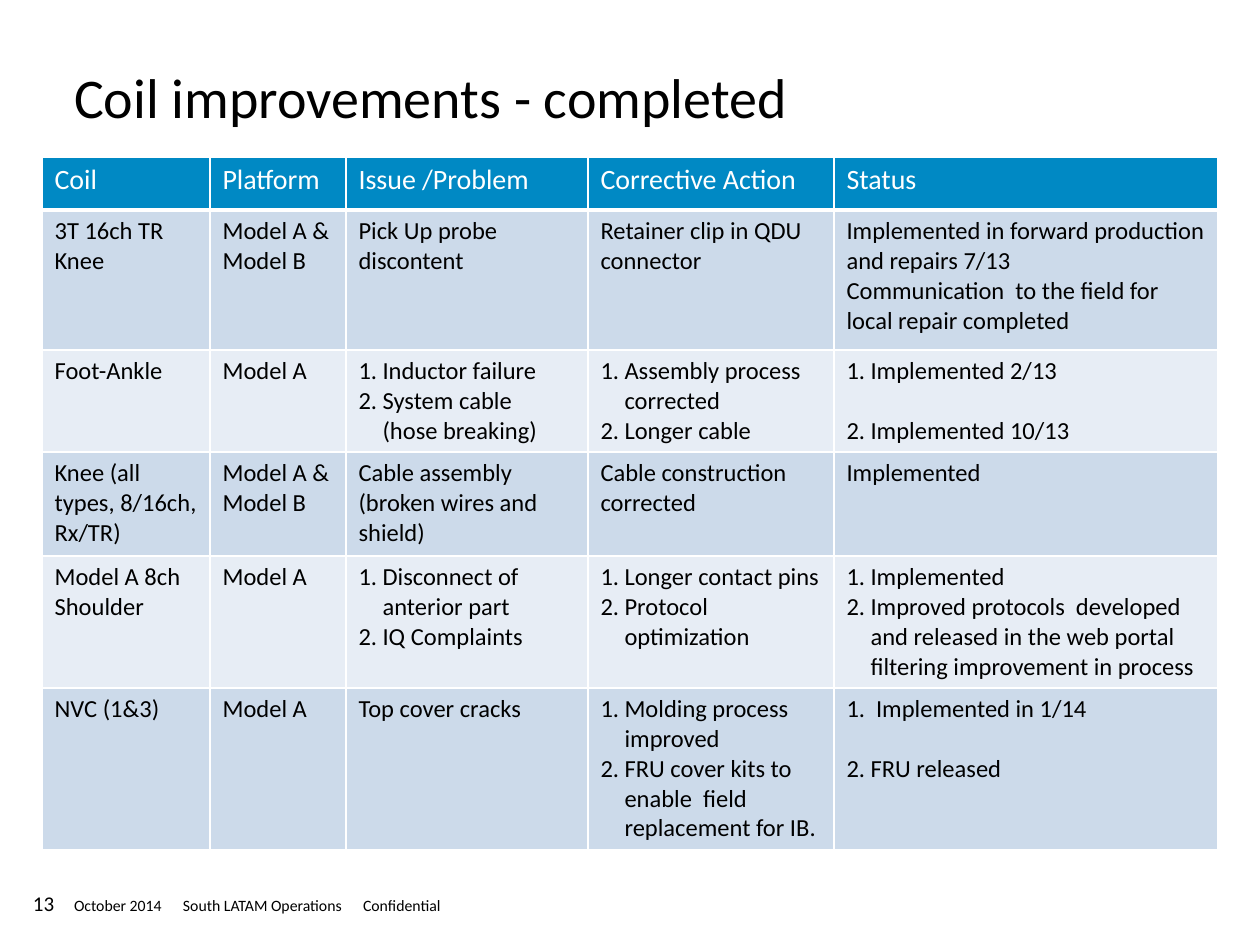
from dataclasses import dataclass

from lxml import etree
from pptx import Presentation
from pptx.dml.color import RGBColor
from pptx.enum.text import MSO_ANCHOR, MSO_AUTO_SIZE, PP_ALIGN
from pptx.oxml.ns import qn
from pptx.util import Emu, Pt

TOP = MSO_ANCHOR.TOP
NO_FIT = MSO_AUTO_SIZE.NONE
LEFT = PP_ALIGN.LEFT
TITLE_ONLY = 5


@dataclass(frozen=True)
class Theme:
    """Colours, font and type sizes of the slide."""
    font: str = "Calibri"
    ink: str = "000000"
    paper: str = "FFFFFF"
    header: str = "0089C4"
    bands: tuple = ("CCDAEA", "E7EDF5")
    title_size: int = 32
    header_size: int = 16
    body_size: int = 14
    number_size: int = 12
    footer_size: int = 9
    rule: int = 1
    header_rule: int = 3


THEME = Theme()
LIST_INDENT = 24
FOOTER_TABS = (109, 289)
COLUMN_WIDTHS = (168, 136, 242, 246, 384)
ROW_HEIGHTS = (53, 140, 102, 104, 132, 162)
HEADINGS = ("Coil", "Platform", "Issue /Problem", "Corrective Action", "Status")
COIL_ROWS = (
    ("3T 16ch TR Knee", "Model A & Model B", "Pick Up probe discontent",
     "Retainer clip in QDU connector",
     ("Implemented in forward production and repairs 7/13",
      "Communication  to the field for local repair completed")),
    ("Foot-Ankle", "Model A",
     ["Inductor failure", "System cable  (hose breaking)"],
     ["Assembly process corrected", "Longer cable"],
     ["Implemented 2/13\n", "Implemented 10/13"]),
    ("Knee (all types, 8/16ch, Rx/TR)", "Model A & Model B",
     "Cable assembly (broken wires and shield)",
     "Cable construction corrected", "Implemented"),
    ("Model A 8ch Shoulder", "Model A",
     ["Disconnect of anterior part", "IQ Complaints"],
     ["Longer contact pins", "Protocol optimization"],
     ["Implemented",
      "Improved protocols  developed and released in the web portal "
      "filtering improvement in process"]),
    ("NVC (1&3)", "Model A", "Top cover cracks",
     ["Molding process improved",
      "FRU cover kits to enable  field replacement for IB."],
     [" Implemented in 1/14\n", "FRU released"]),
)


def px(length):
    """Turn slide pixels into EMU."""
    return Emu(round(length * 914400 / 126))


def place(shape, left, top, width, height):
    """Move and size a shape."""
    shape.left, shape.top = px(left), px(top)
    shape.width, shape.height = px(width), px(height)


def format_para(para, size, color):
    """Format every run and line break of a paragraph."""
    para.alignment = LEFT
    for span in para.runs:
        span.font.name = THEME.font
        span.font.size = Pt(size)
        span.font.bold = False
        span.font.color.rgb = RGBColor.from_string(color)
    points = str(size * 100)
    for line_break in para._p.findall(qn("a:br")):
        etree.SubElement(line_break, qn("a:rPr"), sz=points)
    etree.SubElement(para._p, qn("a:endParaRPr"), sz=points)


def number_para(para):
    """Give a paragraph an automatic number and a hanging indent."""
    props = para._p.get_or_add_pPr()
    props.set("marL", str(px(LIST_INDENT)))
    props.set("indent", str(-px(LIST_INDENT)))
    etree.SubElement(props, qn("a:buFont"), typeface="+mj-lt")
    etree.SubElement(props, qn("a:buAutoNum"), type="arabicPeriod")


def set_tabs(para, stops):
    """Add left tab stops to a paragraph."""
    tabs = etree.SubElement(para._p.get_or_add_pPr(), qn("a:tabLst"))
    for stop in stops:
        etree.SubElement(tabs, qn("a:tab"), pos=str(px(stop)), algn="l")


def fill_frame(frame, text, size):
    """Put one line of text in a frame without margins."""
    frame.margin_left = frame.margin_right = 0
    frame.margin_top = frame.margin_bottom = 0
    frame.word_wrap = True
    frame.auto_size = NO_FIT
    frame.vertical_anchor = TOP
    frame.text = text
    para = frame.paragraphs[0]
    format_para(para, size, THEME.ink)
    return para


def add_title(page, text):
    """Fill the title placeholder."""
    title = page.shapes.title
    place(title, 74, 62, 1111, 139)
    fill_frame(title.text_frame, text, THEME.title_size)


def add_label(page, text, size, left, top, width, height):
    """Add a small text box and return its paragraph."""
    box = page.shapes.add_textbox(0, 0, 0, 0)
    place(box, left, top, width, height)
    return fill_frame(box.text_frame, text, size)


def add_borders(cell, bottom):
    """Draw the rules around a cell."""
    props = cell._tc.get_or_add_tcPr()
    widths = {"lnL": THEME.rule, "lnR": THEME.rule, "lnT": THEME.rule, "lnB": bottom}
    for side, width in widths.items():
        line = etree.SubElement(props, qn(f"a:{side}"), w=str(Pt(width)))
        solid = etree.SubElement(line, qn("a:solidFill"))
        etree.SubElement(solid, qn("a:srgbClr"), val=THEME.paper)


def fill_cell(cell, content, size, color, fill, bottom):
    """Write a cell: a list is numbered, a tuple holds plain paragraphs."""
    items = [content] if isinstance(content, str) else content
    frame = cell.text_frame
    for index, item in enumerate(items):
        para = frame.add_paragraph() if index else frame.paragraphs[0]
        para.text = item
        if isinstance(content, list):
            number_para(para)
        format_para(para, size, color)
    add_borders(cell, bottom)
    cell.fill.solid()
    cell.fill.fore_color.rgb = RGBColor.from_string(fill)


def add_coil_table(page):
    """Add the table of coil improvements."""
    frame = page.shapes.add_table(
        len(ROW_HEIGHTS), len(COLUMN_WIDTHS), px(42), px(157),
        px(sum(COLUMN_WIDTHS)), px(sum(ROW_HEIGHTS)))
    table = frame.table
    for column, width in zip(table.columns, COLUMN_WIDTHS):
        column.width = px(width)
    for row, height in zip(table.rows, ROW_HEIGHTS):
        row.height = px(height)
    for cell, heading in zip(table.rows[0].cells, HEADINGS):
        fill_cell(cell, heading, THEME.header_size, THEME.paper,
                  THEME.header, THEME.header_rule)
    for index, contents in enumerate(COIL_ROWS):
        band = THEME.bands[index % 2]
        for cell, content in zip(table.rows[index + 1].cells, contents):
            fill_cell(cell, content, THEME.body_size, THEME.ink, band, THEME.rule)


def main():
    """Build and save the slide."""
    deck = Presentation()
    deck.slide_width, deck.slide_height = px(1260), px(945)
    page = deck.slides.add_slide(deck.slide_layouts[TITLE_ONLY])
    add_label(page, "13", THEME.number_size, 33, 891, 69, 25)
    footer = add_label(page, "October 2014\tSouth LATAM Operations\tConfidential",
                       THEME.footer_size, 74, 896, 625, 19)
    set_tabs(footer, FOOTER_TABS)
    add_title(page, "Coil improvements - completed")
    add_coil_table(page)
    deck.save("out.pptx")


if __name__ == "__main__":
    main()
